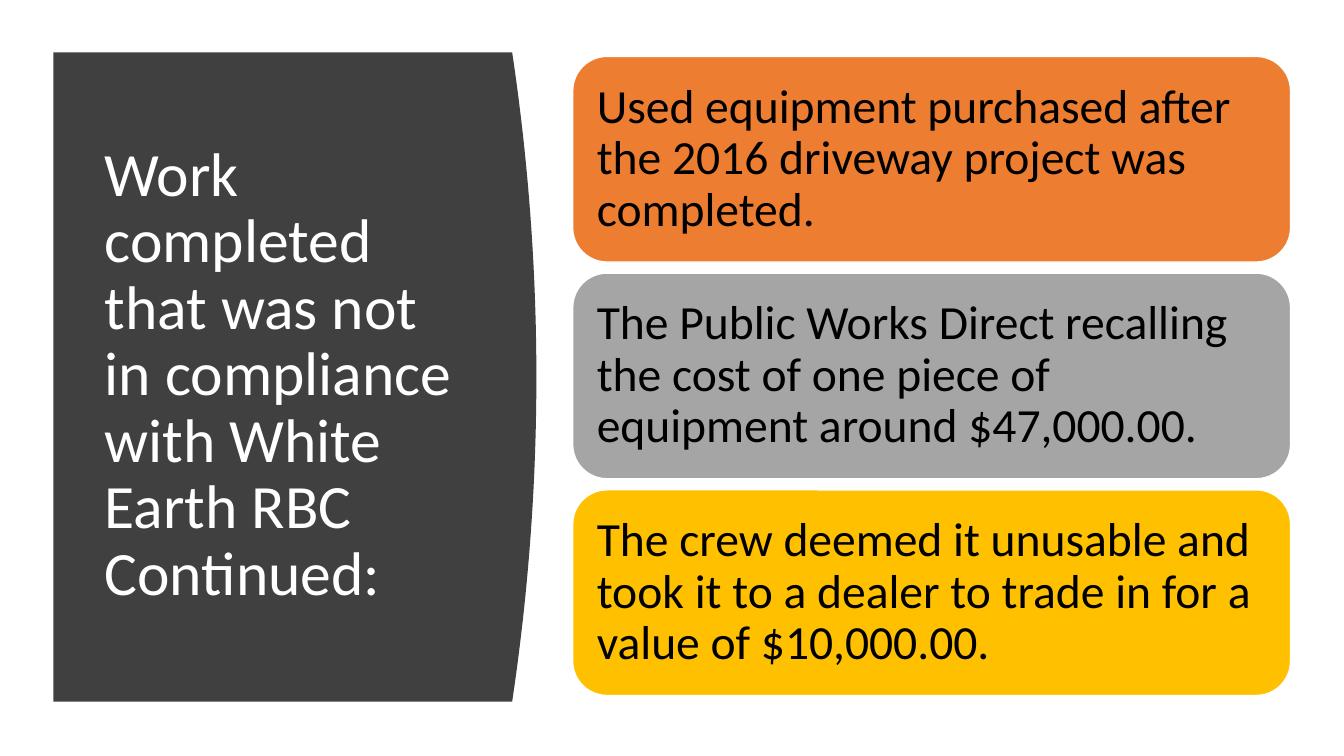
from pptx import Presentation
from pptx.dml.color import RGBColor
from pptx.enum.shapes import MSO_SHAPE
from pptx.enum.text import MSO_ANCHOR, PP_ALIGN
from pptx.util import Inches, Pt


def color(fmt, hex_value):
    fmt.solid()
    fmt.fore_color.rgb = RGBColor.from_string(hex_value)


def write(shape, text, size, hex_value, margin):
    tf = shape.text_frame
    tf.word_wrap = True
    tf.vertical_anchor = MSO_ANCHOR.MIDDLE
    for side in ("left", "top", "right", "bottom"):
        setattr(tf, f"margin_{side}", Inches(margin))
    p = tf.paragraphs[0]
    for name, value in {"alignment": PP_ALIGN.LEFT, "line_spacing": 0.9}.items():
        setattr(p, name, value)
    r = p.add_run()
    r.text = text
    for name, value in {"name": "Calibri", "size": Pt(size)}.items():
        setattr(r.font, name, value)
    color(r.font.fill, hex_value)


prs = Presentation()
prs.slide_width, prs.slide_height = Inches(13.33), Inches(7.5)
s = prs.slides.add_slide(prs.slide_layouts[6])

left, top, edge, bottom = 0.53, 0.52, 5.08, 6.96
bulge, steps = 0.24, 40
curve = []
for i in range(steps + 1):
    t = i / steps
    curve.append((edge + bulge * 4 * t * (1 - t), top + (bottom - top) * t))
builder = s.shapes.build_freeform(Inches(left), Inches(top), scale=1.0)
builder.add_line_segments([(Inches(x), Inches(y)) for x, y in curve + [(left, bottom)]], close=True)
panel = builder.convert_to_shape()
panel.shadow.inherit = False
color(panel.fill, "404040")
panel.line.fill.background()

title = s.shapes.add_textbox(Inches(0.94), Inches(1.11), Inches(3.74), Inches(5.24))
write(title, "Work completed that was not in compliance with White Earth RBC Continued:", 44, "FFFFFF", 0.1)

cards = [
    ("ED7D31", "Used equipment purchased after the 2016 driveway project was completed."),
    ("A5A5A5", "The Public Works Direct recalling the cost of one piece of equipment around $47,000.00."),
    ("FFC000", "The crew deemed it unusable and took it to a dealer to trade in for a value of $10,000.00."),
]
card_top, card_height, pitch = 0.56, 2.04, 2.15
for row, (fill, text) in enumerate(cards):
    sp = s.shapes.add_shape(MSO_SHAPE.ROUNDED_RECTANGLE, Inches(5.68), Inches(card_top + row * pitch),
                            Inches(7.12), Inches(card_height))
    sp.shadow.inherit = False
    color(sp.fill, fill)
    color(sp.line.fill, "FFFFFF")
    sp.line.width = Pt(1)
    write(sp, text, 34, "000000", 0.14)

prs.save("out.pptx")
